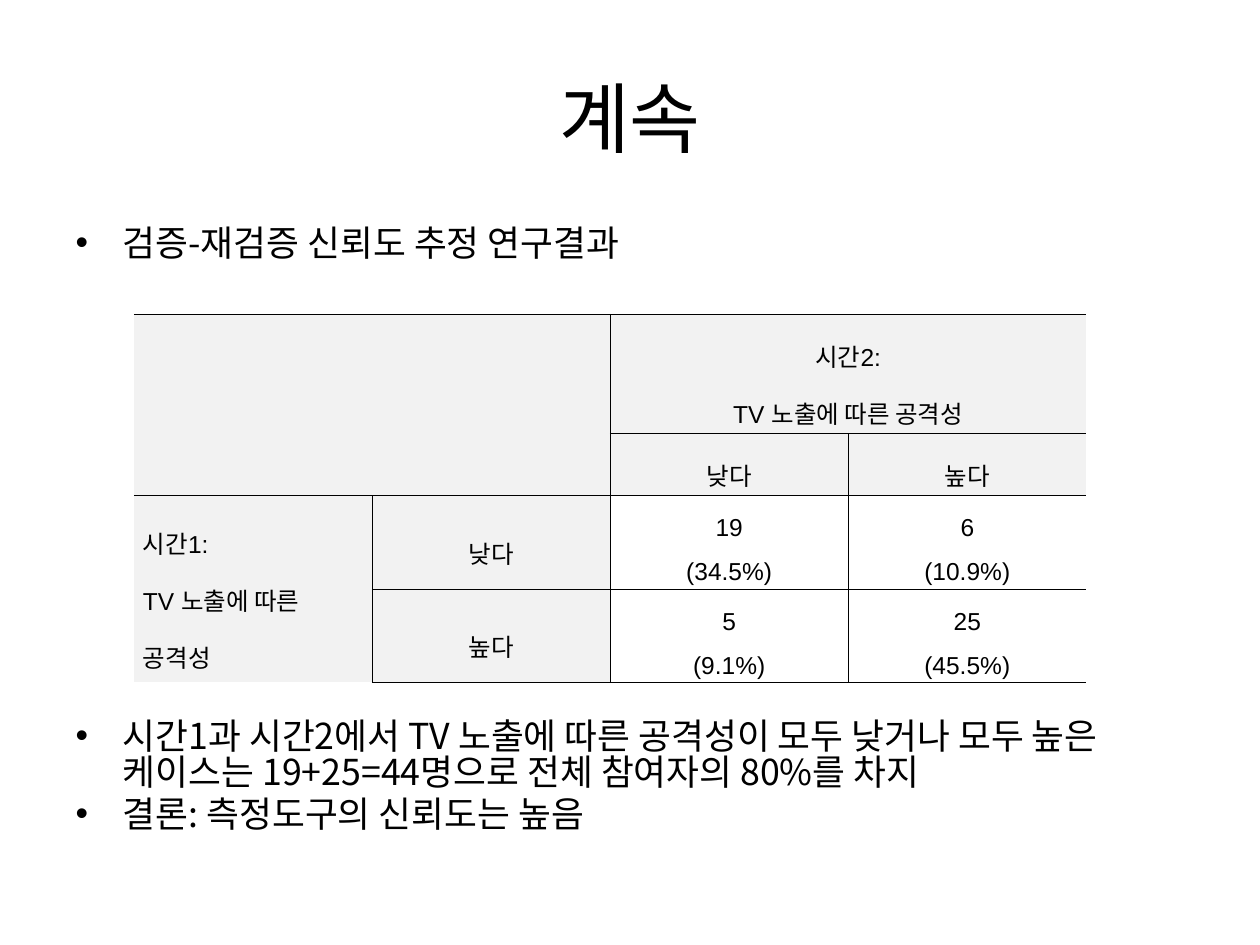
from lxml.etree import SubElement
from pptx import Presentation
from pptx.dml.color import RGBColor
from pptx.enum.text import MSO_ANCHOR as Anchor, MSO_AUTO_SIZE as AutoSize, PP_ALIGN as Align
from pptx.oxml import parse_xml
from pptx.oxml.ns import nsdecls, qn
from pptx.util import Cm, Pt

KOREAN = "Noto Sans CJK KR"


def color(hex_value):
    return RGBColor.from_string(hex_value)


def write(frame, text, size, font=KOREAN, ink="000000", align=Align.LEFT, spacing=1.0, before=(0,)):
    frame.text = text
    for i, paragraph in enumerate(frame.paragraphs):
        paragraph.alignment = align
        paragraph.line_spacing = spacing
        paragraph.space_before = Pt(before[i % len(before)])
        for run in paragraph.runs:
            run.font.size = Pt(size)
            run.font.name = font
            run.font.color.rgb = color(ink)
            SubElement(run.font._element, qn("a:ea")).set("typeface", KOREAN)


prs = Presentation()
prs.slide_width, prs.slide_height = Cm(25.4), Cm(19.05)
slide = prs.slides.add_slide(prs.slide_layouts[1])

title = slide.shapes.title
title.left, title.top, title.width, title.height = Cm(1.27), Cm(0.76), Cm(22.86), Cm(3.18)
title.text_frame.vertical_anchor = Anchor.MIDDLE
write(title.text_frame, "계속", 44, align=Align.CENTER)

findings = slide.placeholders[1]
findings.left, findings.top, findings.width, findings.height = Cm(1.27), Cm(4.45), Cm(22.86), Cm(12.57)
findings.text_frame.auto_size = AutoSize.NONE
write(
    findings.text_frame,
    "검증-재검증 신뢰도 추정 연구결과\n"
    "시간1과 시간2에서 TV 노출에 따른 공격성이 모두 낮거나 모두 높은 케이스는 19+25=44명으로 전체 참여자의 80%를 차지\n"
    "결론: 측정도구의 신뢰도는 높음",
    20.4, spacing=0.85, before=(0, 261, 3),
)

row_heights = [2.4, 1.25, 1.88, 1.88]
results = slide.shapes.add_table(4, 4, Cm(2.7), Cm(6.33), Cm(19.2), Cm(sum(row_heights))).table
for row, height in zip(results.rows, row_heights):
    row.height = Cm(height)
for column in results.columns:
    column.width = Cm(4.8)

blocks = ["AABB", "AACD", "EFGH", "EIJK"]
for first, last in [((0, 0), (1, 1)), ((0, 2), (0, 3)), ((2, 0), (3, 0))]:
    results.cell(*first).merge(results.cell(*last))

labels = {
    "B": "시간2:\nTV 노출에 따른 공격성", "C": "낮다", "D": "높다",
    "E": "시간1:\nTV 노출에 따른\n공격성", "F": "낮다", "I": "높다",
    "G": "19\n(34.5%)", "H": "6\n(10.9%)", "J": "5\n(9.1%)", "K": "25\n(45.5%)",
}
sides = {"lnL": (0, -1), "lnR": (0, 1), "lnT": (-1, 0), "lnB": (1, 0)}

for r, block_row in enumerate(blocks):
    for c, block in enumerate(block_row):
        cell = results.cell(r, c)
        cell.vertical_anchor = Anchor.MIDDLE
        cell.margin_left = cell.margin_right = Cm(0.18)
        cell.margin_top = cell.margin_bottom = Cm(0.05)
        if block in "GHJK":
            cell.fill.background()
        else:
            cell.fill.solid()
            cell.fill.fore_color.rgb = color("F2F2F2")
        if block in labels and not cell.is_spanned:
            write(cell.text_frame, labels[block], 14, font="Arial", spacing=1.6,
                  align=Align.JUSTIFY if block == "E" else Align.CENTER)

        cell_format = cell._tc.get_or_add_tcPr()
        for order, (side, (down, across)) in enumerate(sides.items()):
            y, x = r + down, c + across
            inside = 0 <= y < 4 and 0 <= x < 4
            drawn = blocks[y][x] != block if inside else across == 0
            paint = '<a:solidFill><a:srgbClr val="000000"/></a:solidFill>' if drawn else "<a:noFill/>"
            cell_format.insert(order, parse_xml(f'<a:{side} {nsdecls("a")} w="{Pt(0.28)}">{paint}</a:{side}>'))

prs.save("out.pptx")
